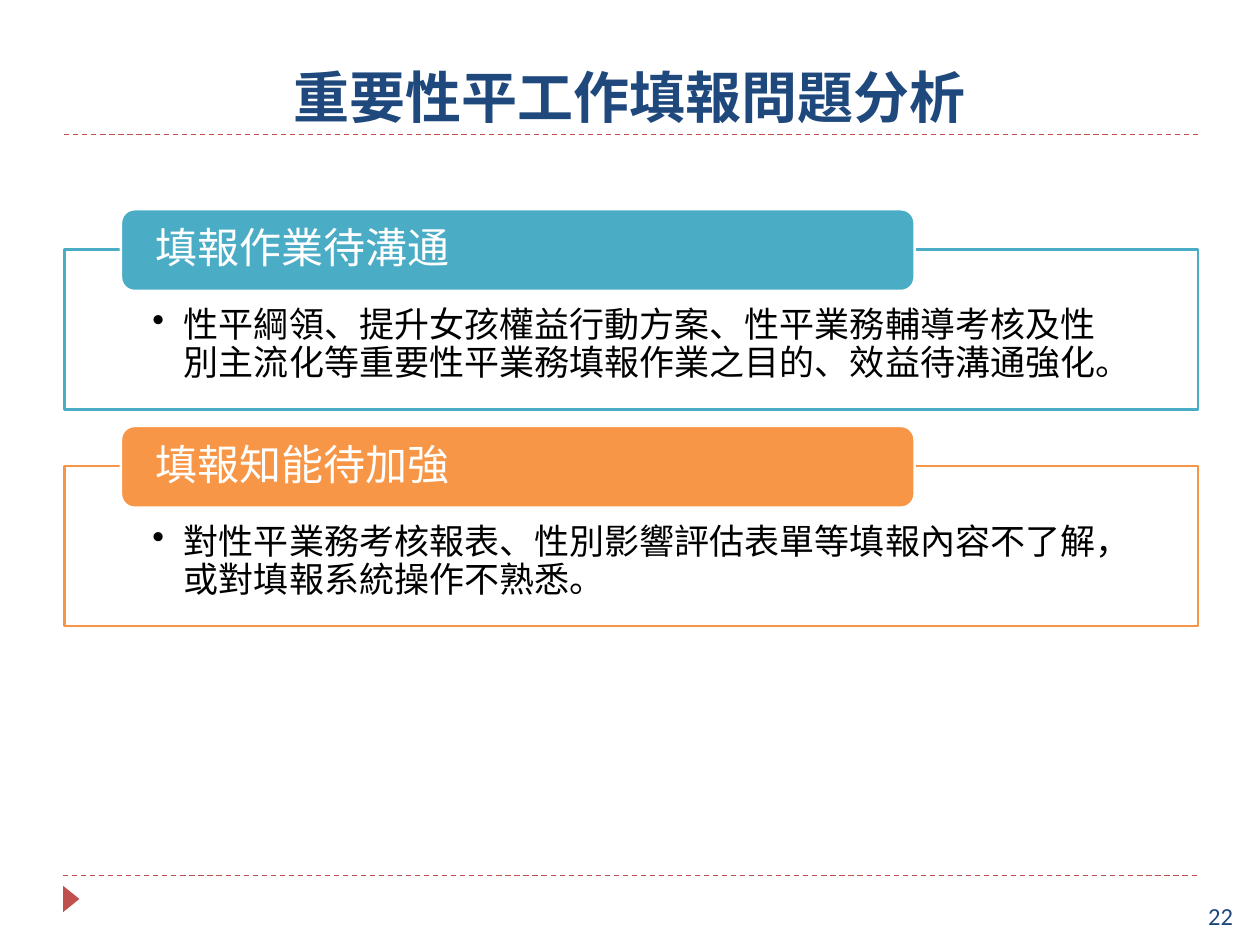
from dataclasses import dataclass

from lxml import etree
from pptx import Presentation
from pptx.dml.color import RGBColor
from pptx.enum import dml, shapes, text
from pptx.oxml import ns
from pptx.util import Inches, Pt

NAVY = RGBColor(0x1F, 0x49, 0x7D)
RED = RGBColor(0xC0, 0x50, 0x4D)
TEAL = RGBColor(0x4B, 0xAC, 0xC6)
ORANGE = RGBColor(0xF7, 0x96, 0x46)
WHITE = RGBColor(0xFF, 0xFF, 0xFF)
BLACK = RGBColor(0, 0, 0)

TOP, STEP = 1.66, 1.72
TITLE = dict(name="Roboto Slab", size=Pt(32), bold=True)
HEAD = dict(name="Arial", size=Pt(24))
BODY = dict(name="Arial", size=Pt(20))
PAGE = dict(name="Calibri", size=Pt(14))


@dataclass
class Topic:
    head: str
    body: str
    color: RGBColor


TOPICS = [
    Topic("填報作業待溝通",
          "性平綱領、提升女孩權益行動方案、性平業務輔導考核及性別主流化等重要性平業務填報作業之目的、效益待溝通強化。",
          TEAL),
    Topic("填報知能待加強",
          "對性平業務考核報表、性別影響評估表單等填報內容不了解，或對填報系統操作不熟悉。",
          ORANGE),
]


def apply(obj, values: dict) -> None:
    for key, value in values.items():
        setattr(obj, key, value)


def write(shape, words: str, font: dict, color: RGBColor, para: dict, frame: dict):
    box = shape.text_frame
    apply(box, dict(word_wrap=True) | frame)
    line = box.paragraphs[0]
    apply(line, para)
    run = line.add_run()
    run.text = words
    apply(run.font, font)
    run.font.color.rgb = color
    return line


def label(slide, area: tuple, words: str, font: dict, para: dict, frame: dict) -> None:
    box = slide.shapes.add_textbox(*map(Inches, area))
    write(box, words, font, NAVY, para, frame)


def block(slide, kind, area: tuple, fill: RGBColor, edge: RGBColor | None = None):
    shape = slide.shapes.add_shape(kind, *map(Inches, area))
    shape.shadow.inherit = False
    shape.fill.solid()
    shape.fill.fore_color.rgb = fill
    if edge is None:
        shape.line.fill.background()
    else:
        shape.line.color.rgb = edge
        shape.line.width = Pt(1.5)
    return shape


def rule(slide, left: float, top: float) -> None:
    line = slide.shapes.add_connector(
        shapes.MSO_CONNECTOR.STRAIGHT, *map(Inches, (left, top, left + 9, top)))
    line.line.color.rgb = RED
    apply(line.line, dict(width=Pt(0.75), dash_style=dml.MSO_LINE.DASH))
    etree.SubElement(line._element.spPr, ns.qn("a:effectLst"))


def bullet(line) -> None:
    props = line._p.get_or_add_pPr()
    apply_set = dict(marL=Inches(0.25), indent=-Inches(0.25))
    for key, value in apply_set.items():
        props.set(key, str(value))
    etree.SubElement(props, ns.qn("a:buChar")).set("char", "•")


def panel(slide, topic: Topic, top: float) -> None:
    kinds = shapes.MSO_SHAPE
    para = dict(alignment=text.PP_ALIGN.LEFT, line_spacing=0.9)
    frame = block(slide, kinds.RECTANGLE, (0.51, top + 0.32, 9, 1.27), WHITE, topic.color)
    line = write(frame, topic.body, BODY, BLACK, para | dict(level=1), dict(
        vertical_anchor=text.MSO_ANCHOR.TOP, margin_left=Inches(0.7),
        margin_right=Inches(0.7), margin_top=Inches(0.46), margin_bottom=Inches(0.16)))
    bullet(line)
    tab = block(slide, kinds.ROUNDED_RECTANGLE, (0.96, top, 6.3, 0.65), topic.color, WHITE)
    write(tab, topic.head, HEAD, WHITE, para, dict(
        vertical_anchor=text.MSO_ANCHOR.MIDDLE, margin_left=Inches(0.24),
        margin_right=Inches(0.24), margin_top=0, margin_bottom=0))


def main() -> None:
    deck = Presentation()
    apply(deck, dict(slide_width=Inches(10), slide_height=Inches(7.5)))
    slide = deck.slides.add_slide(deck.slide_layouts[6])
    rule(slide, 0.5, 6.95)
    rule(slide, 0.51, 1.07)
    mark = block(slide, shapes.MSO_SHAPE.ISOSCELES_TRIANGLE, (0.46, 7.07, 0.21, 0.13), RED)
    mark.rotation = 90
    label(slide, (0.5, 0.17, 9, 0.91), "重要性平工作填報問題分析", TITLE,
          dict(alignment=text.PP_ALIGN.CENTER), dict(vertical_anchor=text.MSO_ANCHOR.BOTTOM))
    label(slide, (9.49, 7.1, 0.51, 0.4), "22", PAGE, {}, {})
    for row, topic in enumerate(TOPICS):
        panel(slide, topic, TOP + row * STEP)
    deck.save("out.pptx")


if __name__ == "__main__":
    main()
